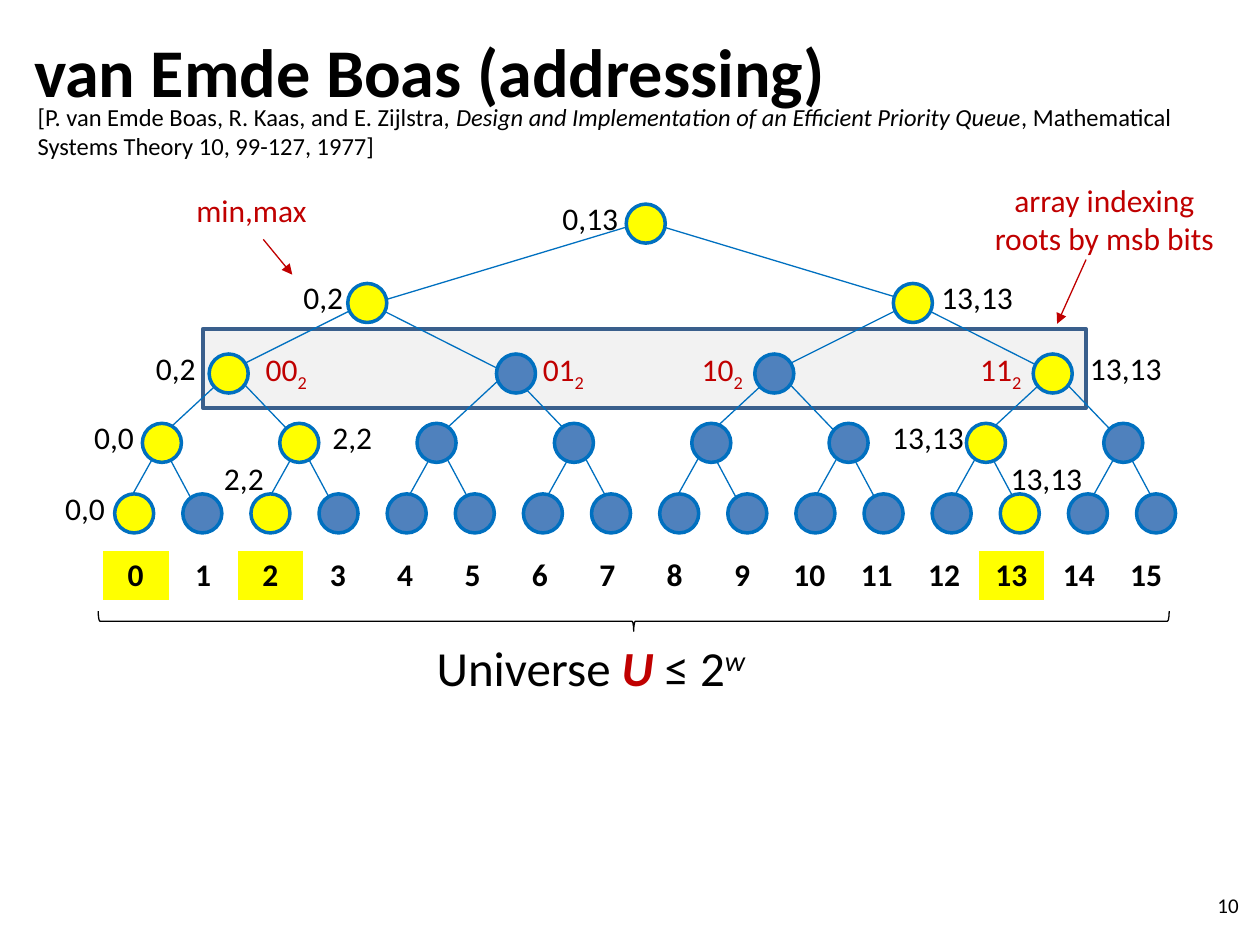
import pptx
import pptx.dml.color
import pptx.enum.shapes
import pptx.enum.text
import pptx.oxml
import pptx.oxml.ns
import pptx.util
from lxml import etree

Inches = pptx.util.Inches
Pt = pptx.util.Pt
SHAPE = pptx.enum.shapes.MSO_SHAPE
ALIGN = pptx.enum.text.PP_ALIGN
ANCHOR = pptx.enum.text.MSO_ANCHOR
qn = pptx.oxml.ns.qn

COLOURS = {
    "black": "000000", "white": "FFFFFF", "red": "C00000",
    "yellow": "FFFF00", "node": "4F81BD", "edge": "0070C0",
    "band": "F2F2F2", "band_line": "3A5F8C",
}
FONT = "Calibri"
NODE_SIZE = 0.31


def colour(name):
    return pptx.dml.color.RGBColor.from_string(COLOURS[name])


def write(frame, spans, size=18, ink="black", bold=False, italic=False,
          align=ALIGN.LEFT, anchor=ANCHOR.TOP):
    """Fill a frame with one paragraph; spans is text or (text, overrides) pairs."""
    frame.word_wrap = True
    frame.vertical_anchor = anchor
    para = frame.paragraphs[0]
    para.alignment = align
    pairs = [(spans, {})] if isinstance(spans, str) else spans
    for text, changes in pairs:
        span = para.add_run()
        span.text = text
        span.font.name = FONT
        span.font.size = Pt(size)
        span.font.bold = changes.get("bold", bold)
        span.font.italic = changes.get("italic", italic)
        span.font.color.rgb = colour(changes.get("ink", ink))
        if "baseline" in changes:
            span.font._element.set("baseline", str(changes["baseline"] * 1000))


class Slide:
    def __init__(self, deck):
        self.page = deck.slides.add_slide(deck.slide_layouts[5])
        self.shapes = self.page.shapes

    def title(self, text, left, top, width, height):
        box = self.shapes.title
        box.left, box.top = Inches(left), Inches(top)
        box.width, box.height = Inches(width), Inches(height)
        write(box.text_frame, text, size=39, bold=True, anchor=ANCHOR.MIDDLE)

    def text(self, spans, left, top, width, height=0.4, **style):
        box = self.shapes.add_textbox(
            Inches(left), Inches(top), Inches(width), Inches(height))
        write(box.text_frame, spans, **style)

    def shape(self, kind, left, top, width, height, line, weight, fill=None):
        box = self.shapes.add_shape(
            kind, Inches(left), Inches(top), Inches(width), Inches(height))
        box.shadow.inherit = False
        box.line.color.rgb = colour(line)
        box.line.width = Pt(weight)
        if fill:
            box.fill.solid()
            box.fill.fore_color.rgb = colour(fill)
        else:
            box.fill.background()
        return box

    def line(self, start, end, ink, arrow=False):
        connector = self.shapes.add_connector(
            pptx.enum.shapes.MSO_CONNECTOR.STRAIGHT,
            *(Inches(value) for value in (*start, *end)))
        connector.line.color.rgb = colour(ink)
        connector.line.width = Pt(0.75)
        if arrow:
            tail = etree.SubElement(connector.line._get_or_add_ln(), qn("a:tailEnd"))
            tail.set("type", "triangle")
        etree.SubElement(connector._element.spPr, qn("a:effectLst"))

    def number_row(self, count, marked, left, top, width, height):
        table = self.shapes.add_table(
            1, count, Inches(left), Inches(top), Inches(width), Inches(height)).table
        table.horz_banding = table.first_row = False
        for number in range(count):
            table.columns[number].width = Inches(width / count)
            cell = table.cell(0, number)
            write(cell.text_frame, str(number), bold=True, align=ALIGN.CENTER)
            self.cell_borders(cell)
            if number in marked:
                cell.fill.solid()
                cell.fill.fore_color.rgb = colour("yellow")
            else:
                cell.fill.background()

    def cell_borders(self, cell):
        properties = cell._tc.get_or_add_tcPr()
        for side, weight in (("L", 1), ("R", 1), ("T", 1), ("B", 3)):
            border = etree.SubElement(properties, qn(f"a:ln{side}"), w=str(Pt(weight)))
            fill = etree.SubElement(border, qn("a:solidFill"))
            etree.SubElement(fill, qn("a:srgbClr"), val=COLOURS["white"])


# Per level: parent centres, then child and parent ends of the left and right edge
# as (offset from the centre, y).
QUARTERS = [1.86, 4.06, 6.19, 8.39]
EDGES = [
    ([x + offset for x in QUARTERS for offset in (-0.58, 0.52)],
     ((-0.27, 4), (-0.03, 3.57)), ((0.26, 4), (0.03, 3.57))),
    (QUARTERS, ((-0.58, 3.46), (-0.04, 2.96)), ((0.49, 3.48), (0.04, 3.01))),
    ([2.95, 7.28], ((-1.06, 2.91), (-0.04, 2.4)), ((1.07, 2.96), (0.04, 2.44))),
    ([5.12], ((-2.13, 2.4), (-0.04, 1.77)), ((2.13, 2.4), (0.04, 1.77))),
]
# Per level: top, left of each node, indexes of the occupied nodes.
LEAVES = 16
STORED = {0, 2, 13}
LEVELS = [
    (3.92, [0.91 + 8.11 / 15 * i for i in range(LEAVES)], STORED),
    (3.36, [1.13 + 1.09 * i for i in range(8)], {0, 1, 6}),
    (2.81, [1.66, 3.94, 5.99, 8.2], {0, 3}),
    (2.25, [2.76, 7.09], {0, 1}),
    (1.62, [4.97], {0}),
]
MIN_MAX = [
    ("0,0", 0.28, 3.83), ("0,0", 0.51, 3.27), ("0,2", 1, 2.72), ("2,2", 2.4, 3.27),
    ("2,2", 1.54, 3.59), ("0,2", 2.17, 2.16), ("0,13", 4.29, 1.53),
    ("13,13", 7.36, 2.16), ("13,13", 8.54, 2.72), ("13,13", 6.97, 3.27),
    ("13,13", 7.91, 3.59),
]
ROOT_BITS = [("00", 2.01, 1.34), ("01", 4.21, 1.34), ("10", 5.47, 1.34), ("11", 7.68, 0.55)]


def draw_tree(slide):
    for centres, *sides in EDGES:
        for centre in centres:
            for (child_x, child_y), (parent_x, parent_y) in sides:
                slide.line((centre + child_x, child_y),
                           (centre + parent_x, parent_y), "edge")
    for top, lefts, occupied in LEVELS:
        for index, left in enumerate(lefts):
            slide.shape(SHAPE.OVAL, left, top, NODE_SIZE, NODE_SIZE, "edge", 2,
                        fill="yellow" if index in occupied else "node")


def main():
    deck = pptx.Presentation()
    deck.slide_width, deck.slide_height = Inches(10), Inches(7.5)
    slide = Slide(deck)

    slide.shape(SHAPE.RECTANGLE, 1.61, 2.61, 7.01, 0.63, "band_line", 2, fill="band")
    slide.title("van Emde Boas (addressing)", 0.17, 0.13, 9, 0.85)
    slide.text("10", 7.6, 6.98, 2.33, size=12, align=ALIGN.RIGHT, anchor=ANCHOR.MIDDLE)
    draw_tree(slide)
    slide.number_row(LEAVES, STORED, 0.81, 4.37, 8.56, 0.41)

    for label, left, top in MIN_MAX:
        slide.text(label, left, top, 0.79, align=ALIGN.CENTER)
    slide.text([
        ("[P. van Emde Boas, R. Kaas, and E. Zijlstra, ", {}),
        ("Design and Implementation of an Efficient Priority Queue", {"italic": True}),
        (", Mathematical Systems Theory 10, 99-127, 1977]", {}),
    ], 0.2, 0.76, 9.8, 0.71, size=14)
    slide.text([
        ("Universe ", {}),
        ("U", {"ink": "red", "bold": True, "italic": True}),
        (" ≤ 2", {}),
        ("w", {"italic": True, "baseline": 30}),
    ], 2.09, 5.01, 5.2, 0.57, size=28, align=ALIGN.CENTER)
    brace = slide.shape(SHAPE.LEFT_BRACE, 4.95, 0.68, 0.16, 8.5, "black", 0.75)
    brace.rotation = 270

    slide.line((2.09, 1.9), (2.32, 2.18), "red", arrow=True)
    slide.text("min,max", 1.46, 1.47, 1.1, ink="red")
    for bits, left, width in ROOT_BITS:
        slide.text([(bits, {}), ("2", {"baseline": -25})], left, 2.73, width, ink="red")
    slide.line((8.62, 2.06), (8.39, 2.57), "red", arrow=True)
    slide.text("array indexing roots by msb bits", 7.76, 1.39, 2.01, 0.71,
               ink="red", align=ALIGN.CENTER)
    deck.save("out.pptx")


if __name__ == "__main__":
    main()
